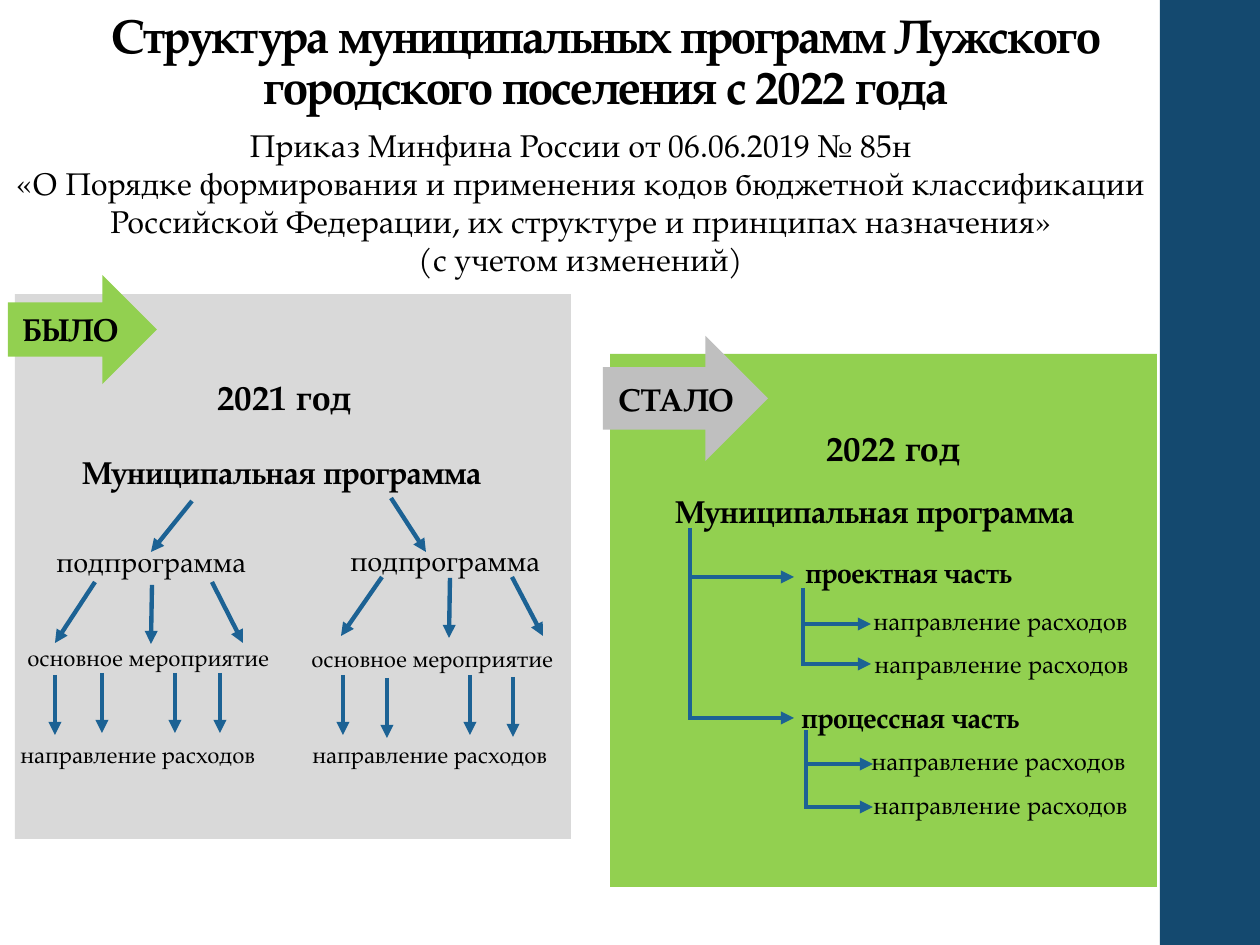
from dataclasses import dataclass

from lxml.etree import SubElement
from pptx import Presentation
from pptx.dml.color import RGBColor
from pptx.enum.shapes import MSO_CONNECTOR as Connector, MSO_SHAPE as Preset
from pptx.enum.text import MSO_ANCHOR as Anchor, MSO_AUTO_SIZE as AutoSize, PP_ALIGN as Align
from pptx.oxml.ns import qn
from pptx.slide import Slide
from pptx.util import Emu, Pt

SCALE = 914400 / 126
FONT = "TeX Gyre Pagella"
BLACK, NAVY, BLUE = "000000", "14496F", "1C6294"
GREEN, LIGHT_GRAY, GRAY = "92D050", "D9D9D9", "BFBFBF"

PROGRAM = "Муниципальная программа"
SUBPROGRAM = "подпрограмма"
ACTIVITY = "основное мероприятие"
SPENDING = "направление расходов"
TITLE = "Структура муниципальных программ Лужского городского поселения с 2022 года"
ORDER = (
    "Приказ Минфина России от 06.06.2019 № 85н\n"
    "«О Порядке формирования и применения кодов бюджетной классификации "
    "Российской Федерации, их структуре и принципах назначения»\n"
    "(с учетом изменений)"
)


@dataclass(frozen=True)
class Block:
    left: int
    top: int
    width: int
    height: int
    fill: str
    preset: Preset = Preset.RECTANGLE


@dataclass(frozen=True)
class Label:
    text: str
    left: int
    top: int
    width: int
    height: int
    size: int
    bold: bool = False
    align: Align = Align.LEFT


@dataclass(frozen=True)
class Line:
    x1: int
    y1: int
    x2: int
    y2: int
    arrow: bool = True


@dataclass(frozen=True)
class Bracket:
    trunk: int
    top: int
    branches: tuple[int, ...]
    end: int


BLOCKS = (
    Block(1160, 0, 101, 945, NAVY),
    Block(15, 294, 556, 545, LIGHT_GRAY),
    Block(8, 275, 149, 109, GREEN, Preset.RIGHT_ARROW),
    Block(610, 354, 547, 533, GREEN),
    Block(603, 336, 165, 125, GRAY, Preset.RIGHT_ARROW),
)
HEADINGS = (
    Label(ORDER, -24, 120, 1210, 165, 18, align=Align.CENTER),
    Label("БЫЛО", 10, 304, 129, 50, 18, True),
    Label("СТАЛО", 606, 374, 149, 50, 18, True),
    Label("2021 год", 155, 369, 258, 55, 20, True, Align.CENTER),
    Label("2022 год", 764, 420, 258, 55, 20, True, Align.CENTER),
    Label(PROGRAM, 70, 447, 478, 50, 18, True),
    Label(PROGRAM, 663, 486, 503, 50, 18, True),
)
OLD_LEVELS = (
    Label(SUBPROGRAM, 44, 538, 241, 47, 16),
    Label(SUBPROGRAM, 338, 537, 241, 47, 16),
    Label(ACTIVITY, 15, 638, 326, 40, 13),
    Label(ACTIVITY, 299, 639, 277, 40, 13),
    Label(SPENDING, 8, 735, 302, 40, 13),
    Label(SPENDING, 300, 735, 302, 40, 13),
)
NEW_LEVELS = (
    Label("проектная часть", 793, 549, 296, 47, 16, True),
    Label("процессная часть", 789, 694, 296, 47, 16, True),
    *(Label(SPENDING, left, top, 302, 43, 14)
      for left, top in ((861, 600), (862, 643), (859, 740), (861, 784))),
)
SLANTED_ARROWS = (
    Line(192, 501, 151, 552),
    Line(391, 498, 426, 552),
    Line(95, 582, 55, 643),
    Line(152, 585, 151, 644),
    Line(212, 582, 243, 643),
    Line(382, 577, 341, 636),
    Line(450, 578, 449, 638),
    Line(512, 577, 543, 636),
)
DROP_LENGTH = 60
DROPS = ((55, 675), (102, 673), (175, 673), (220, 673),
         (343, 675), (387, 678), (470, 675), (513, 677))
BRACKETS = (
    Bracket(690, 528, (577, 718), 794),
    Bracket(803, 588, (624, 664), 871),
    Bracket(806, 730, (764, 807), 873),
)


def px(value: int) -> Emu:
    return Emu(round(value * SCALE))


def color(value: str) -> RGBColor:
    return RGBColor.from_string(value)


def apply(target: object, values: dict) -> None:
    for name, value in values.items():
        setattr(target, name, value)


def fill_text(shape, label: Label) -> None:
    shape.text_frame.text = label.text
    for paragraph in shape.text_frame.paragraphs:
        paragraph.alignment = label.align
        for run in paragraph.runs:
            apply(run.font, {"name": FONT, "size": Pt(label.size), "bold": label.bold})
            run.font.color.rgb = color(BLACK)


def draw_title(slide: Slide, label: Label) -> None:
    title = slide.shapes.title
    apply(title, {name: px(getattr(label, name))
                  for name in ("left", "top", "width", "height")})
    fill_text(title, label)
    apply(title.text_frame, {"vertical_anchor": Anchor.BOTTOM, "word_wrap": True,
                             "auto_size": AutoSize.NONE})
    paragraph = title.text_frame.paragraphs[0]
    apply(paragraph, {"line_spacing": 0.9, "space_before": Pt(0)})
    paragraph.runs[0]._r.get_or_add_rPr().set("spc", "-70")


def draw_block(slide: Slide, block: Block) -> None:
    shape = slide.shapes.add_shape(
        block.preset, px(block.left), px(block.top), px(block.width), px(block.height))
    shape.shadow.inherit = False
    shape.fill.solid()
    shape.fill.fore_color.rgb = color(block.fill)
    shape.line.fill.background()


def draw_label(slide: Slide, label: Label) -> None:
    shape = slide.shapes.add_textbox(
        px(label.left), px(label.top), px(label.width), px(label.height))
    apply(shape.text_frame, {"word_wrap": True, "auto_size": AutoSize.SHAPE_TO_FIT_TEXT})
    fill_text(shape, label)


def draw_line(slide: Slide, line: Line) -> None:
    connector = slide.shapes.add_connector(
        Connector.STRAIGHT, px(line.x1), px(line.y1), px(line.x2), px(line.y2))
    connector.line.width = Pt(2.5)
    connector.line.color.rgb = color(BLUE)
    if line.arrow:
        SubElement(connector.line._get_or_add_ln(), qn("a:tailEnd"), type="triangle")
    SubElement(connector._element.spPr, qn("a:effectLst"))


def draw_bracket(slide: Slide, bracket: Bracket) -> None:
    start = bracket.top
    for y in bracket.branches:
        draw_line(slide, Line(bracket.trunk, start, bracket.trunk, y + 2, arrow=False))
        draw_line(slide, Line(bracket.trunk, y, bracket.end, y))
        start = y


def main() -> None:
    presentation = Presentation()
    apply(presentation, {"slide_width": px(1260), "slide_height": px(945)})
    slide = presentation.slides.add_slide(presentation.slide_layouts.get_by_name("Title Only"))
    draw_title(slide, Label(TITLE, 55, 3, 1101, 118, 27, True, Align.CENTER))
    for block in BLOCKS:
        draw_block(slide, block)
    for label in HEADINGS + OLD_LEVELS + NEW_LEVELS:
        draw_label(slide, label)
    for line in SLANTED_ARROWS:
        draw_line(slide, line)
    for x, top in DROPS:
        draw_line(slide, Line(x, top, x, top + DROP_LENGTH))
    for bracket in BRACKETS:
        draw_bracket(slide, bracket)
    presentation.save("out.pptx")


if __name__ == "__main__":
    main()
